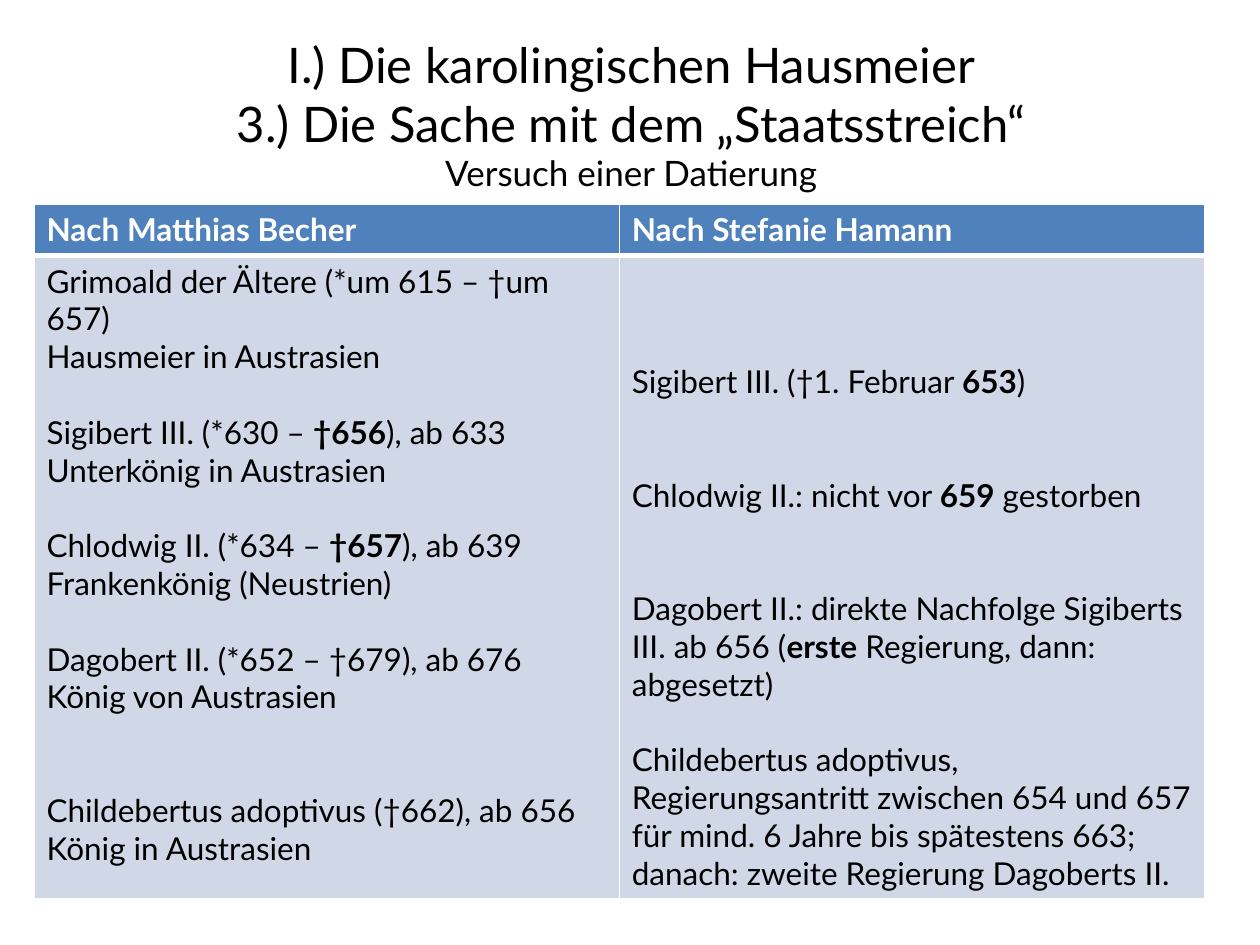
from lxml.etree import SubElement
from pptx import Presentation
from pptx.dml.color import RGBColor
from pptx.enum.text import MSO_ANCHOR, PP_ALIGN
from pptx.oxml import parse_xml
from pptx.oxml.ns import nsdecls, qn
from pptx.util import Inches, Pt

FONT = "Lato"
HUES = {"head": "4F81BD", "body": "D0D8E8", "ink": "000000", "white": "FFFFFF"}
LINE = 21.6  # height of one 18 pt line, in points

TITLE = [
    ("I.) Die karolingischen Hausmeier", 28),
    ("3.) Die Sache mit dem „Staatsstreich“", 28),
    ("Versuch einer Datierung", 20),
]
# Each column: heading, top margin in inches, then (lines of gap before, text).
# Bars enclose the bold words.
COLS = [
    ("Nach Matthias Becher", 0.05, [
        (0, "Grimoald der Ältere (*um 615 – †um 657)"),
        (0, "Hausmeier in Austrasien"),
        (1, "Sigibert III. (*630 – |†656|), ab 633 Unterkönig in Austrasien"),
        (1, "Chlodwig II. (*634 – |†657|), ab 639 Frankenkönig (Neustrien)"),
        (1, "Dagobert II. (*652 – †679), ab 676 König von Austrasien"),
        (2, "Childebertus adoptivus (†662), ab 656 König in Austrasien"),
    ]),
    ("Nach Stefanie Hamann", 0.85, [
        (0, "Sigibert III. (†1. Februar |653|)"),
        (2, "Chlodwig II.: nicht vor |659| gestorben"),
        (2, "Dagobert II.: direkte Nachfolge Sigiberts III. ab 656 "
            "(|erste| Regierung, dann: abgesetzt)"),
        (1, "Childebertus adoptivus, Regierungsantritt zwischen 654 und 657 "
            "für mind. 6 Jahre bis spätestens 663;"),
        (0, "danach: zweite Regierung Dagoberts II."),
    ]),
]


def style(run, size, hue, bold=False):
    font = run.font
    font.name, font.size, font.bold = FONT, Pt(size), bold
    font.color.rgb = RGBColor.from_string(HUES[hue])


def place(shape, box):
    shape.left, shape.top, shape.width, shape.height = map(Inches, box)


def add_title(slide, box):
    title = slide.shapes.title
    place(title, box)
    frame = title.text_frame
    frame.vertical_anchor = MSO_ANCHOR.MIDDLE
    para = frame.paragraphs[0]
    para.text = "\v".join(text for text, _ in TITLE)
    para.alignment = PP_ALIGN.CENTER
    for run, (_, size) in zip(para.runs, TITLE):
        style(run, size, "ink")
    # Breaks take the size of the line they end
    for mark, (_, size) in zip(para._p.findall(qn("a:br")), TITLE):
        SubElement(mark, qn("a:rPr"), sz=str(size * 100))


def dress(cell, hue, top, bottom):
    """Fill a cell and give it white borders."""
    cell.fill.solid()
    cell.fill.fore_color.rgb = RGBColor.from_string(HUES[hue])
    props = cell._tc.get_or_add_tcPr()
    sides = {"L": 1, "R": 1, "T": top, "B": bottom}
    for spot, (side, width) in enumerate(sides.items()):
        props.insert(spot, parse_xml(
            f'<a:ln{side} {nsdecls("a")} w="{Pt(width)}"><a:solidFill>'
            f'<a:srgbClr val="{HUES["white"]}"/></a:solidFill></a:ln{side}>'))


def fill_body(cell, items):
    frame = cell.text_frame
    for i, (gap, text) in enumerate(items):
        para = frame.add_paragraph() if i else frame.paragraphs[0]
        para.space_before = Pt(gap * LINE)
        for j, part in enumerate(text.split("|")):
            run = para.add_run()
            run.text = part
            style(run, 18, "ink", bold=j % 2 == 1)


def add_dates(slide, box, head):
    left, top, width, height = map(Inches, box)
    table = slide.shapes.add_table(2, len(COLS), left, top, width, height).table
    table.rows[0].height = Inches(head)
    table.rows[1].height = height - Inches(head)
    for col, (name, inset, items) in enumerate(COLS):
        table.columns[col].width = width // len(COLS)
        # Heading
        cell = table.cell(0, col)
        cell.text_frame.text = name
        style(cell.text_frame.paragraphs[0].runs[0], 18, "white", bold=True)
        dress(cell, "head", 1, 3)
        # Dates
        cell = table.cell(1, col)
        cell.margin_top = Inches(inset)
        fill_body(cell, items)
        dress(cell, "body", 3, 1)


def main():
    deck = Presentation()
    deck.slide_width, deck.slide_height = Inches(10), Inches(7.5)
    slide = deck.slides.add_slide(deck.slide_layouts[5])
    add_title(slide, (0.51, 0.28, 9, 1.25))
    add_dates(slide, (0.27, 1.62, 9.29, 5.5), head=0.41)
    deck.save("out.pptx")


if __name__ == "__main__":
    main()
